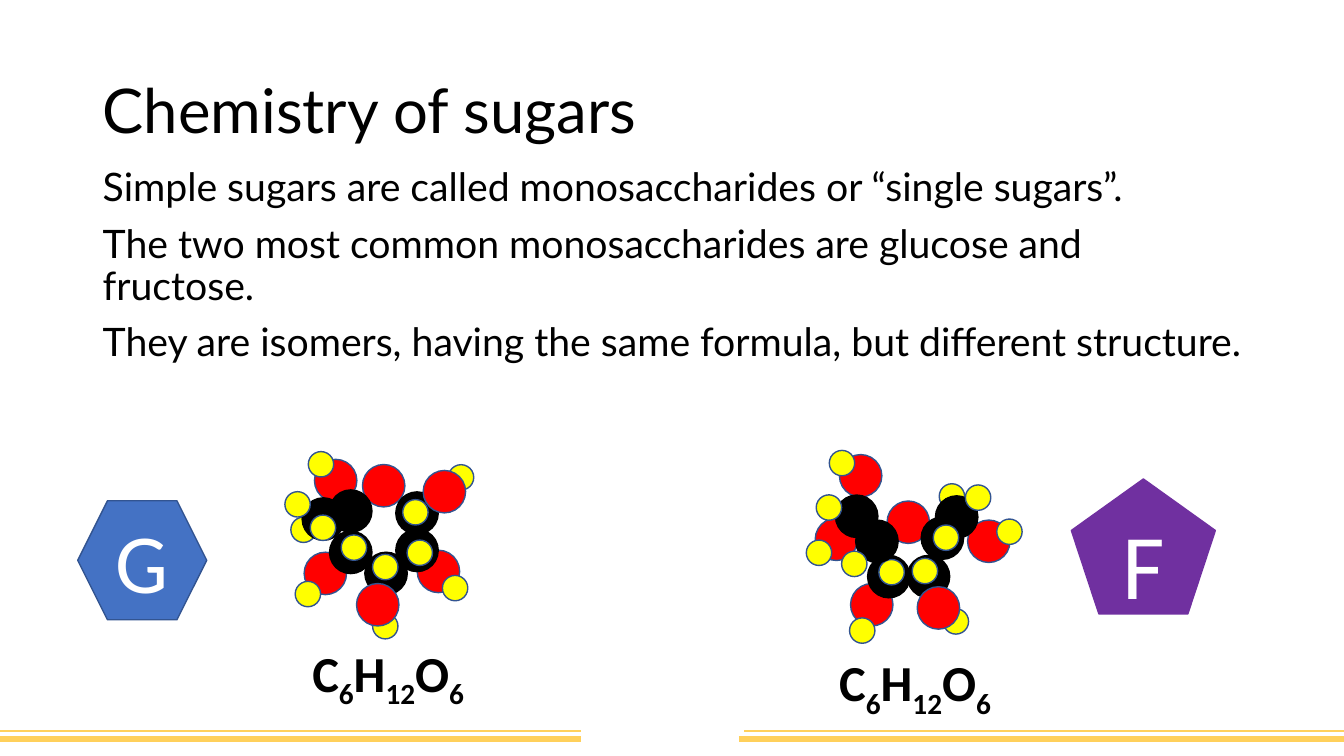
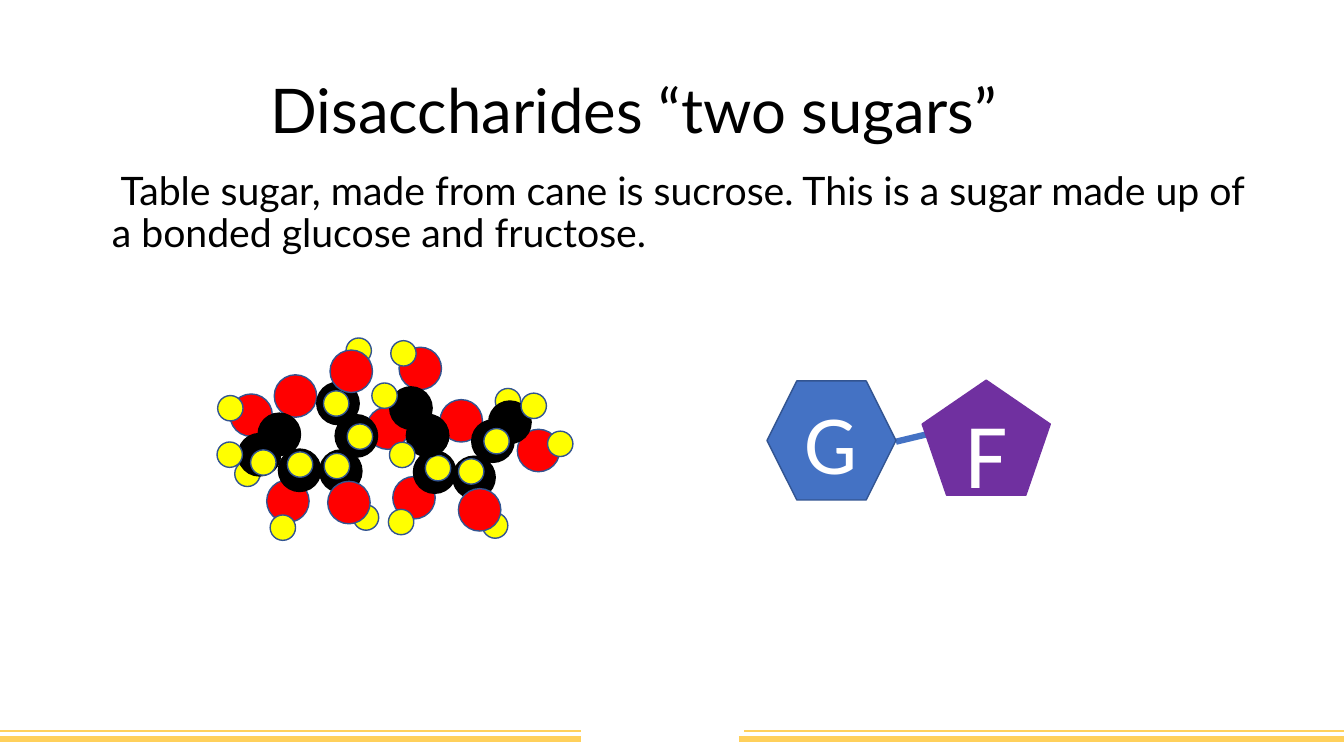
import math
import pptx
import pptx.dml.color
import pptx.enum.shapes
import pptx.enum.text
import pptx.oxml.ns
import pptx.util
from dataclasses import dataclass
from lxml import etree

Cm = pptx.util.Cm
Pt = pptx.util.Pt
Shape = pptx.enum.shapes.MSO_SHAPE
Align = pptx.enum.text.PP_ALIGN
Anchor = pptx.enum.text.MSO_ANCHOR


@dataclass(frozen=True)
class Theme:
    ink: str = "000000"
    white: str = "FFFFFF"
    band: str = "FFD05B"
    outline: str = "325491"
    oxygen: str = "FF0000"
    hydrogen: str = "FFFF00"
    glucose: str = "4472C4"
    fructose: str = "7030A0"
    text_font: str = "Lato"
    label_font: str = "Calibri"
    title_size: int = 44
    body_size: int = 28
    formula_size: int = 36
    glucose_size: int = 60
    fructose_size: int = 66
    thin: float = 1
    rule: float = 1.5
    thick: float = 4.5


theme = Theme()
rgb = pptx.dml.color.RGBColor.from_string

ATOMS = {
    "C": (1.07, theme.ink, theme.ink),
    "O": (1.07, theme.oxygen, theme.outline),
    "H": (0.64, theme.hydrogen, theme.outline),
}

GLUCOSE = [
    ("O", -1.10, -1.63), ("O", -1.36, 0.71), ("O", 1.49, 0.66),
    ("C", 0.95, 0.13), ("O", 0.11, -1.50), ("C", 0.95, -0.81),
    ("H", 1.91, 1.08), ("H", 2.06, -1.71), ("H", 1.02, 0.19),
    ("H", 0.15, 2.04), ("H", -1.80, 1.23), ("H", -1.47, -2.04),
    ("C", 0.17, 0.71), ("C", -0.72, 0.18), ("C", -0.72, -0.86),
    ("O", -0.04, 1.50), ("H", 0.15, 0.55), ("H", -1.91, -0.39),
    ("H", -0.64, 0.06), ("H", 0.91, -0.83), ("O", 1.64, -1.35),
    ("C", -1.41, -0.66), ("H", -1.42, -0.44), ("H", -2.06, -1.03),
]

FRUCTOSE = [
    ("O", -1.96, -0.19), ("H", -2.40, 0.15), ("O", -1.35, -1.79),
    ("H", -1.82, -2.11), ("C", -1.45, -0.77), ("H", -2.15, -0.99),
    ("O", 1.88, -0.14), ("H", 2.40, -0.38), ("H", 0.95, -1.27),
    ("C", 1.07, -0.75), ("H", 1.61, -1.24), ("O", -1.07, 1.46),
    ("O", -0.15, -0.62), ("C", 0.71, -0.22), ("H", 0.80, -0.23),
    ("H", -1.31, 2.11), ("C", -0.64, 0.75), ("H", 1.05, 1.88),
    ("C", 0.36, 0.75), ("O", 0.61, 1.54), ("H", 0.27, 0.61),
    ("H", -0.57, 0.64), ("C", -0.94, -0.14), ("H", -1.51, 0.43),
]

GLUCOSE_LOSES = {2, 6}
FRUCTOSE_LOSES = {1}

BANDS = [
    (18.62, 18.62, 33.87, theme.thick),
    (18.62, 0, 14.63, theme.thick),
    (18.42, 0, 14.63, theme.rule),
    (18.42, 18.75, 33.87, theme.rule),
]

BADGES = {
    "G": (Shape.HEXAGON, theme.glucose, theme.outline, theme.glucose_size),
    "F": (Shape.REGULAR_PENTAGON, theme.fructose, theme.fructose, theme.fructose_size),
}

FORMULA = [("C", False), ("6", True), ("H", False), ("12", True), ("O", False), ("6", True)]

PAGES = [
    {
        "title": ("Chemistry of sugars", 2.34, 29.21, Align.LEFT),
        "body": ([
            "Simple sugars are called monosaccharides or “single sugars”.",
            "The two most common monosaccharides are glucose and fructose.",
            "They are isomers, having the same formula, but different structure.",
        ], 2.34, 4.11),
        "molecules": [
            (GLUCOSE, set(), 9.56, 13.74, 0),
            (FRUCTOSE, set(), 23.04, 13.78, 0),
        ],
        "formulas": [(7.62, 16.05), (20.9, 16.28)],
        "bonds": [],
        "badges": [("G", 1.96, 12.62, 3.25, 3), ("F", 27, 12.07, 3.63, 3.4)],
    },
    {
        "title": ("Disaccharides “two sugars”", 0.81, 30.33, Align.CENTER),
        "body": ([
            " Table sugar, made from cane is sucrose. This is a sugar made up of "
            "a bonded glucose and fructose.",
        ], 2.57, 4.19),
        "molecules": [
            (FRUCTOSE, FRUCTOSE_LOSES, 11.69, 11.24, 7.7),
            (GLUCOSE, GLUCOSE_LOSES, 8.09, 11.34, -29.5),
        ],
        "formulas": [],
        "bonds": [(22.58, 11.13, 24.08, 10.77)],
        "badges": [("G", 19.33, 9.6, 3.25, 3), ("F", 23.24, 9.58, 3.23, 2.9)],
    },
]


def add_line(page, left, top, right, bottom, color, width):
    line = page.shapes.add_connector(
        pptx.enum.shapes.MSO_CONNECTOR.STRAIGHT, Cm(left), Cm(top), Cm(right), Cm(bottom))
    line.line.color.rgb = rgb(color)
    line.line.width = Pt(width)
    etree.SubElement(line._element.spPr, pptx.oxml.ns.qn("a:effectLst"))


def add_text(page, lines, left, top, width, height, size, anchor, align=Align.LEFT):
    box = page.shapes.add_textbox(Cm(left), Cm(top), Cm(width), Cm(height))
    frame = box.text_frame
    frame.word_wrap = True
    frame.vertical_anchor = anchor
    frame.text = "\n".join(lines)
    for index, para in enumerate(frame.paragraphs):
        para.alignment = align
        para.line_spacing = 0.9
        para.space_before = Pt(10 if index else 0)
        for span in para.runs:
            span.font.name = theme.text_font
            span.font.size = Pt(size)
            span.font.color.rgb = rgb(theme.ink)


deck = pptx.Presentation()
deck.slide_width = Cm(33.87)
deck.slide_height = Cm(19.05)

for content in PAGES:
    page = deck.slides.add_slide(deck.slide_layouts[6])

    for height, start, end, weight in BANDS:
        add_line(page, start, height, end, height, theme.band, weight)

    title, left, width, align = content["title"]
    add_text(page, [title], left, 1.02, width, 3.68, theme.title_size, Anchor.MIDDLE, align)
    lines, left, top = content["body"]
    add_text(page, lines, left, top, 29.21, 12.9, theme.body_size, Anchor.TOP)

    for atoms, lost, center_x, center_y, degrees in content["molecules"]:
        cosine = math.cos(math.radians(degrees))
        sine = math.sin(math.radians(degrees))
        for index, (element, x, y) in enumerate(atoms):
            if index in lost:
                continue
            diameter, fill, outline = ATOMS[element]
            left = center_x + x * cosine - y * sine - diameter / 2
            top = center_y + x * sine + y * cosine - diameter / 2
            atom = page.shapes.add_shape(
                Shape.OVAL, Cm(left), Cm(top), Cm(diameter), Cm(diameter))
            atom.shadow.inherit = False
            atom.fill.solid()
            atom.fill.fore_color.rgb = rgb(fill)
            atom.line.color.rgb = rgb(outline)
            atom.line.width = Pt(theme.thin)

    for left, top in content["formulas"]:
        box = page.shapes.add_textbox(Cm(left), Cm(top), Cm(6.53), Cm(1.8))
        box.text_frame.word_wrap = True
        para = box.text_frame.paragraphs[0]
        for symbol, lowered in FORMULA:
            span = para.add_run()
            span.text = symbol
            span.font.name = theme.label_font
            span.font.size = Pt(theme.formula_size)
            span.font.bold = True
            span.font.color.rgb = rgb(theme.ink)
            if lowered:
                span._r.get_or_add_rPr().set("baseline", "-25000")

    for bond in content["bonds"]:
        add_line(page, *bond, theme.glucose, theme.thick)

    for letter, left, top, width, height in content["badges"]:
        outline_shape, fill, outline, size = BADGES[letter]
        badge = page.shapes.add_shape(outline_shape, Cm(left), Cm(top), Cm(width), Cm(height))
        badge.shadow.inherit = False
        badge.fill.solid()
        badge.fill.fore_color.rgb = rgb(fill)
        badge.line.color.rgb = rgb(outline)
        badge.line.width = Pt(theme.thin)
        badge.text_frame.text = letter
        badge.text_frame.vertical_anchor = Anchor.MIDDLE
        para = badge.text_frame.paragraphs[0]
        para.alignment = Align.CENTER
        span = para.runs[0]
        span.font.name = theme.label_font
        span.font.size = Pt(size)
        span.font.color.rgb = rgb(theme.white)

deck.save("out.pptx")
